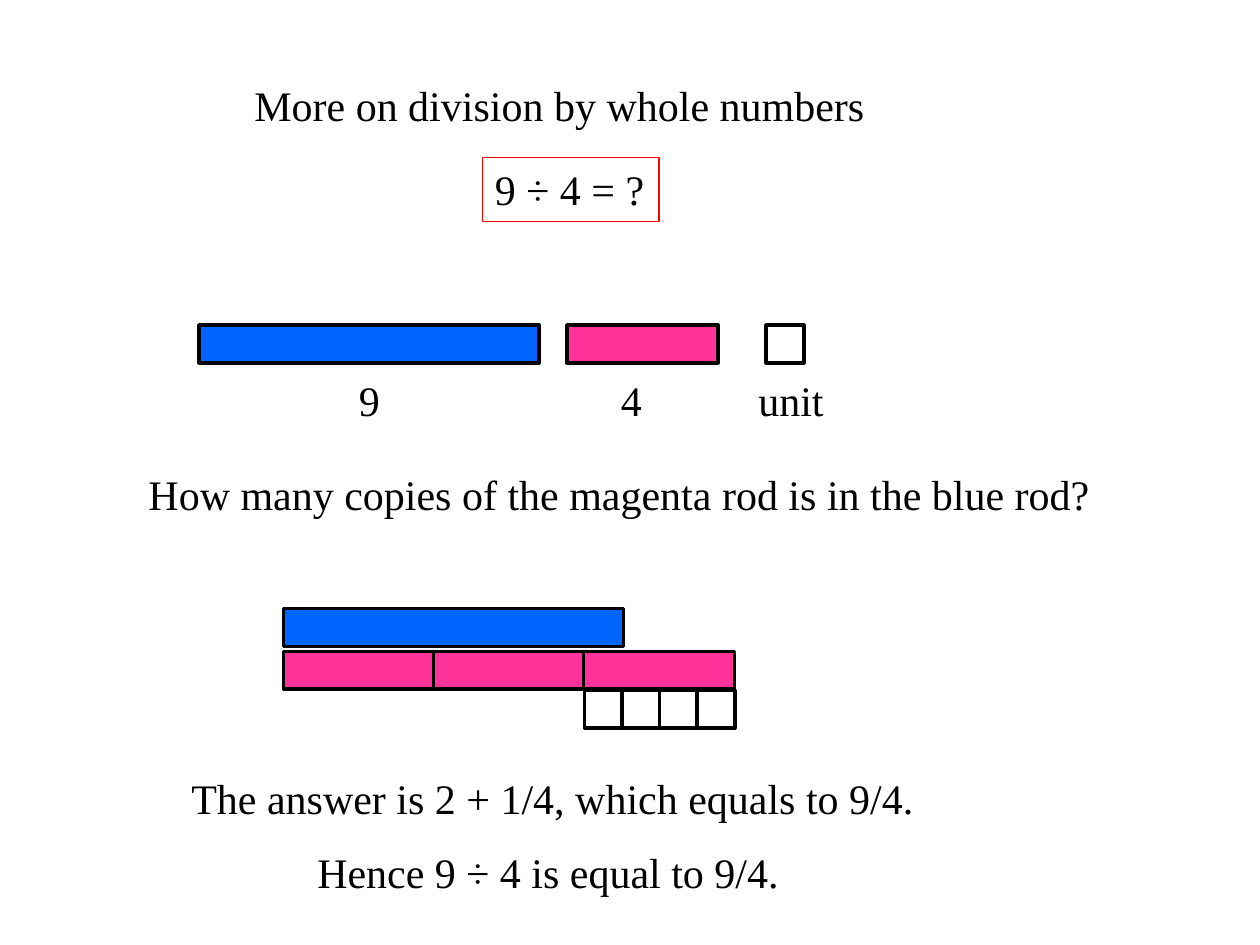
import pptx
import pptx.dml.color
import pptx.enum.shapes
import pptx.enum.text
import pptx.util

Inches = pptx.util.Inches
UNIT = 0.3
NINE, FOUR = 9 * UNIT, 4 * UNIT
BLUE, MAGENTA, WHITE, BLACK, RED = "0066FF", "FF3399", "FFFFFF", "000000", "FF0000"
FONT_FORMAT = {"name": "Times New Roman", "size": pptx.util.Pt(24)}
FRAME_FORMAT = {"word_wrap": False, "auto_size": pptx.enum.text.MSO_AUTO_SIZE.SHAPE_TO_FIT_TEXT}


def rgb(hex_color):
    """Return the colour for a hex string."""
    return pptx.dml.color.RGBColor.from_string(hex_color)


def apply_format(target, values):
    """Set each attribute of the target from the given values."""
    for attribute, value in values.items():
        setattr(target, attribute, value)


def add_outline(shape, color, points):
    """Give the shape a solid outline."""
    shape.line.color.rgb = rgb(color)
    shape.line.width = pptx.util.Pt(points)


def add_words(slide, words, left, top, width):
    """Add one unwrapped line of text."""
    label = slide.shapes.add_textbox(Inches(left), Inches(top), Inches(width), Inches(0.51))
    apply_format(label.text_frame, FRAME_FORMAT)
    run = label.text_frame.paragraphs[0].add_run()
    run.text = words
    apply_format(run.font, FONT_FORMAT)
    run.font.color.rgb = rgb(BLACK)
    return label


def add_rod(slide, color, left, top, length):
    """Add one outlined rod of the given length."""
    rod = slide.shapes.add_shape(
        pptx.enum.shapes.MSO_SHAPE.RECTANGLE,
        Inches(left), Inches(top), Inches(length), Inches(UNIT))
    rod.shadow.inherit = False
    rod.fill.solid()
    rod.fill.fore_color.rgb = rgb(color)
    add_outline(rod, BLACK, 2)


def add_heading(slide, left, top, width):
    """Place the title and the framed problem below it."""
    add_words(slide, "More on division by whole numbers", left, top, width)
    problem = add_words(slide, "9 ÷ 4 = ?", left + 1.91, top + 0.67, 1.4)
    add_outline(problem, RED, 0.75)


def add_rod_key(slide, left, top):
    """Place each kind of rod with its name underneath."""
    key = [
        (BLUE, 0, NINE, "9", 1.17, 0.37),
        (MAGENTA, 2.92, FOUR, "4", 3.25, 0.37),
        (WHITE, 4.5, UNIT, "unit", 4.34, 0.72),
    ]
    for color, rod_offset, length, name, name_offset, name_width in key:
        add_rod(slide, color, left + rod_offset, top, length)
        add_words(slide, name, left + name_offset, top + 0.34, name_width)


def add_comparison(slide, left, top):
    """Stack the blue rod, three magenta rods and the units of the last one."""
    magenta_step, magenta_count = 1.19, 3
    last_magenta = left + (magenta_count - 1) * magenta_step
    add_rod(slide, BLUE, left, top, NINE)
    for index in range(magenta_count):
        add_rod(slide, MAGENTA, left + index * magenta_step, top + 0.34, FOUR)
    for index in range(4):
        add_rod(slide, WHITE, last_magenta + 0.01 + index * magenta_step / 4, top + 0.65, UNIT)


def add_conclusion(slide, left, top, width):
    """Place the answer and what follows from it."""
    add_words(slide, "The answer is 2 + 1/4, which equals to 9/4.", left, top, width)
    add_words(slide, "Hence 9 ÷ 4 is equal to 9/4.", left + 1, top + 0.59, 3.9)


def main():
    """Build and save the division slide."""
    deck = pptx.Presentation()
    deck.slide_width, deck.slide_height = Inches(10), Inches(7.5)
    slide = deck.slides.add_slide(deck.slide_layouts[6])
    add_heading(slide, 1.92, 0.58, 5.09)
    add_rod_key(slide, 1.58, 2.58)
    add_words(slide, "How many copies of the magenta rod is in the blue rod?", 1.08, 3.67, 7.74)
    add_comparison(slide, 2.25, 4.83)
    add_conclusion(slide, 1.42, 6.08, 5.99)
    deck.save("out.pptx")


if __name__ == "__main__":
    main()
